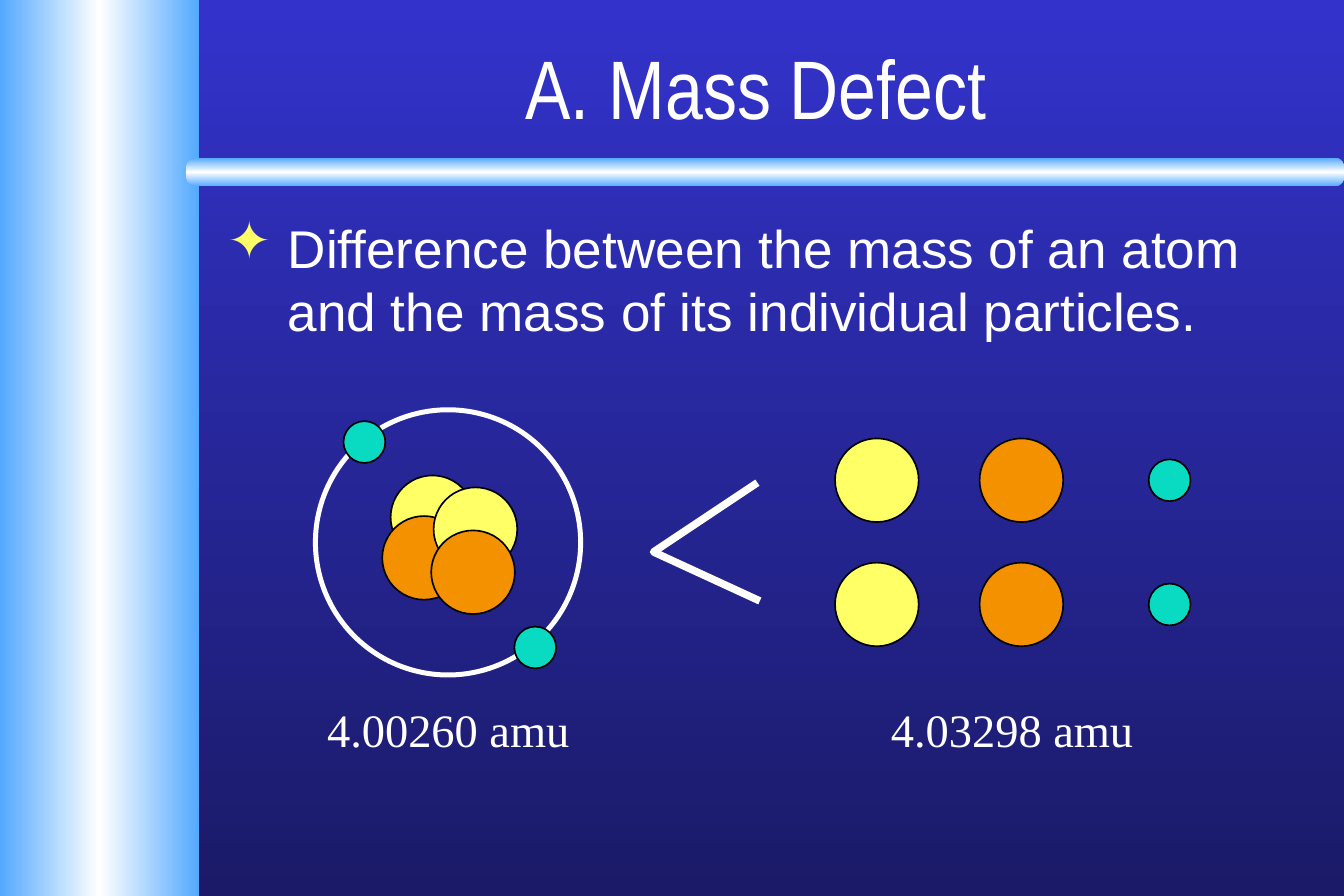
import pptx
import pptx.util
import pptx.dml.color
import pptx.enum.shapes
import pptx.enum.text
import pptx.oxml.ns
from lxml import etree

RGB = pptx.dml.color.RGBColor
SHAPE = pptx.enum.shapes.MSO_SHAPE
ALIGN = pptx.enum.text.PP_ALIGN
ANCHOR = pptx.enum.text.MSO_ANCHOR
qn = pptx.oxml.ns.qn

WHITE = RGB(0xFF, 0xFF, 0xFF)
BLACK = RGB(0x00, 0x00, 0x00)
SKY = RGB(0x53, 0xA9, 0xFF)
BLUE = RGB(0x33, 0x33, 0xCC)
NAVY = RGB(0x1A, 0x1A, 0x68)
YELLOW = RGB(0xFF, 0xFF, 0x66)
ORANGE = RGB(0xF4, 0x91, 0x00)
TEAL = RGB(0x09, 0xDB, 0xC2)

PX = 9144  # EMU, 100 px to the inch
SLIDE_SIZE = (1125, 750)
NUCLEON, ELECTRON = 70, 35
SHEEN = [(0, SKY), (50, WHITE), (100, SKY)]

TITLE = "A. Mass Defect"
DEFINITION = ("Difference between the mass of an atom "
              "and the mass of its individual particles.")
MASSES = [("4.00260 amu", 264), ("4.03298 amu", 736)]

# Separate particles: centre of each column, diameter, colour
PARTICLE_COLUMNS = [(734, NUCLEON, YELLOW), (855, NUCLEON, ORANGE), (979, ELECTRON, TEAL)]
PARTICLE_ROWS = [402, 506]

# Atom: centre x, centre y, diameter, colour, from back to front
NUCLEUS = [
    (362, 433, NUCLEON, YELLOW),
    (355, 467, NUCLEON, ORANGE),
    (398, 443, NUCLEON, YELLOW),
    (396, 479, NUCLEON, ORANGE),
]
ORBIT = (375, 454, 222)
ELECTRONS = [(448, 542, ELECTRON, TEAL), (305, 370, ELECTRON, TEAL)]
LESS_THAN = [(634, 404), (547, 462), (636, 503)]


def px(*lengths):
    return [length * PX for length in lengths]


def set_gradient(fill, element, stops, angle):
    """Fill with (percent, colour) stops; angle is in degrees clockwise."""
    fill.gradient()
    gradient = element.find(".//" + qn("a:gradFill"))
    stop_list = gradient.find(qn("a:gsLst"))
    for old_stop in list(stop_list):
        stop_list.remove(old_stop)
    for percent, colour in stops:
        stop = etree.SubElement(stop_list, qn("a:gs"), pos=str(percent * 1000))
        etree.SubElement(stop, qn("a:srgbClr"), val=str(colour))
    gradient.find(qn("a:lin")).set("ang", str(angle * 60000))


def add_sheen(slide, kind, box, angle):
    band = slide.shapes.add_shape(kind, *px(*box))
    band.shadow.inherit = False
    band.line.fill.background()
    set_gradient(band.fill, band.element, SHEEN, angle)
    return band


def add_circle(slide, x, y, diameter, colour=None, line=BLACK, line_width=1):
    """Draw a circle around (x, y), hollow when no colour is given."""
    circle = slide.shapes.add_shape(
        SHAPE.OVAL, *px(x - diameter / 2, y - diameter / 2, diameter, diameter))
    circle.shadow.inherit = False
    if colour is None:
        circle.fill.background()
    else:
        circle.fill.solid()
        circle.fill.fore_color.rgb = colour
    circle.line.color.rgb = line
    circle.line.width = pptx.util.Pt(line_width)


def write(frame, text, font_name, size):
    frame.text = text
    paragraph = frame.paragraphs[0]
    font = paragraph.runs[0].font
    font.name, font.size = font_name, pptx.util.Pt(size)
    font.color.rgb = WHITE
    return paragraph


def add_title(slide):
    title = slide.shapes.title
    title.left, title.top, title.width, title.height = px(179, 10, 908, 125)
    title.text_frame.vertical_anchor = ANCHOR.MIDDLE
    paragraph = write(title.text_frame, TITLE, "Arial Narrow", 50)
    paragraph.alignment = ALIGN.CENTER
    effects = etree.Element(qn("a:effectLst"))
    shadow = etree.SubElement(effects, qn("a:outerShdw"), dist="50800", dir="2700000")
    etree.SubElement(shadow, qn("a:srgbClr"), val=str(BLACK))
    paragraph.runs[0].font.fill  # the shadow follows the text colour
    paragraph.runs[0]._r.rPr.find(qn("a:solidFill")).addnext(effects)


def add_definition(slide):
    frame = slide.shapes.add_textbox(*px(181, 175, 908, 229)).text_frame
    frame.word_wrap = True
    paragraph = write(frame, DEFINITION, "Arial", 32)
    properties = paragraph._p.get_or_add_pPr()
    properties.set("marL", str(50 * PX))
    properties.set("indent", str(-50 * PX))
    before = etree.SubElement(properties, qn("a:spcBef"))
    etree.SubElement(before, qn("a:spcPct"), val="20000")
    bullet_colour = etree.SubElement(properties, qn("a:buClr"))
    etree.SubElement(bullet_colour, qn("a:srgbClr"), val=str(YELLOW))
    etree.SubElement(properties, qn("a:buChar"), char="✦")


def add_less_than(slide):
    start, *others = LESS_THAN
    builder = slide.shapes.build_freeform(*start, scale=PX)
    builder.add_line_segments(others, close=False)
    sign = builder.convert_to_shape()
    sign.shadow.inherit = False
    sign.fill.background()
    sign.line.color.rgb = WHITE
    sign.line.width = pptx.util.Pt(4.5)


def main():
    deck = pptx.Presentation()
    deck.slide_width, deck.slide_height = px(*SLIDE_SIZE)
    slide = deck.slides.add_slide(deck.slide_layouts[5])
    set_gradient(slide.background.fill, slide.element, [(0, BLUE), (100, NAVY)], 90)

    add_sheen(slide, SHAPE.RECTANGLE, (0, 0, 167, 750), 0)
    bar = add_sheen(slide, SHAPE.ROUNDED_RECTANGLE, (156, 132, 969, 24), 90)
    bar.adjustments[0] = 0.33
    add_title(slide)
    add_definition(slide)

    for x, diameter, colour in PARTICLE_COLUMNS:
        for y in PARTICLE_ROWS:
            add_circle(slide, x, y, diameter, colour)
    for nucleon in NUCLEUS:
        add_circle(slide, *nucleon)
    add_circle(slide, *ORBIT, line=WHITE, line_width=3)
    for electron in ELECTRONS:
        add_circle(slide, *electron)
    add_less_than(slide)

    for mass, left in MASSES:
        frame = slide.shapes.add_textbox(*px(left, 582, 223, 57)).text_frame
        frame.word_wrap = False
        write(frame, mass, "Times New Roman", 28)

    deck.save("out.pptx")


if __name__ == "__main__":
    main()
